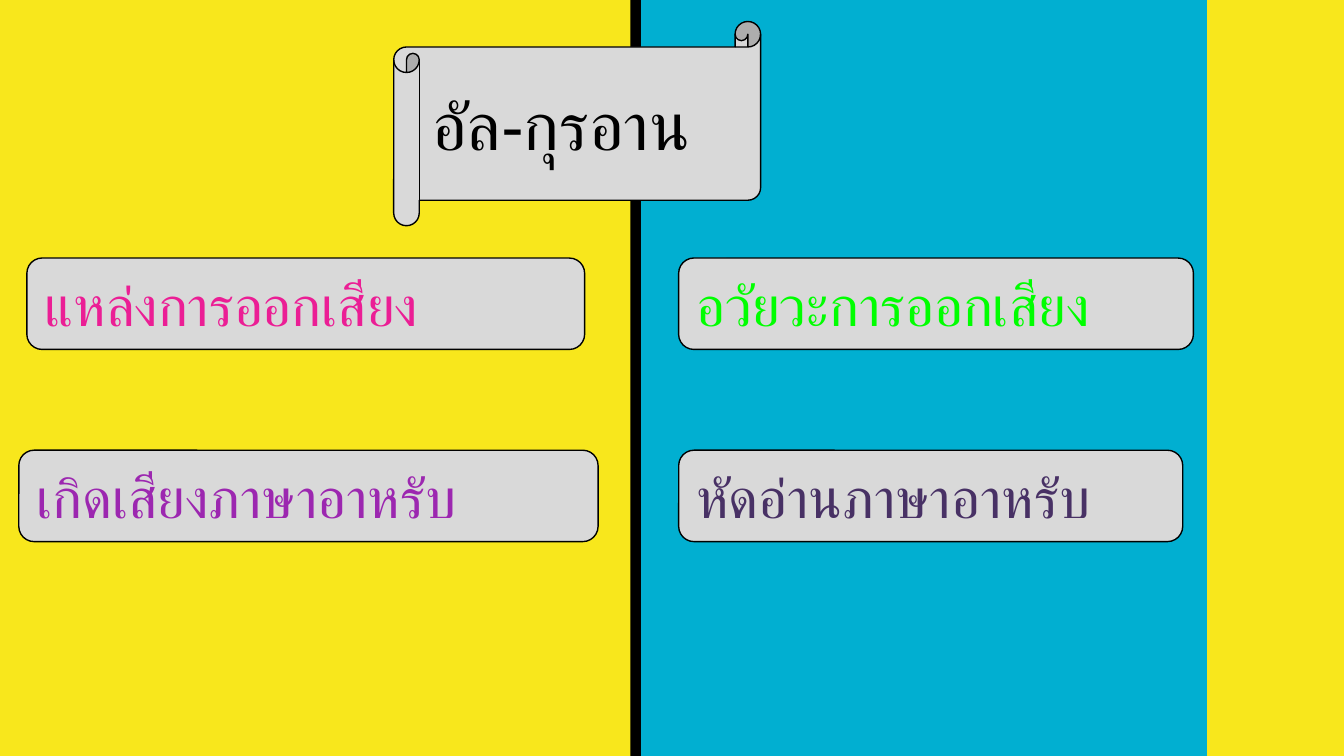
from lxml import etree
from pptx import Presentation
from pptx import util as u
from pptx.dml.color import RGBColor
from pptx.enum import shapes, text
from pptx.oxml import ns

YELLOW = RGBColor(0xF8, 0xE7, 0x1C)
BLUE = RGBColor(0x01, 0xAF, 0xD1)
BLACK = RGBColor(0x00, 0x00, 0x00)
GREY = RGBColor(0xD9, 0xD9, 0xD9)
PINK = RGBColor(0xEB, 0x1E, 0x95)
PURPLE = RGBColor(0x9C, 0x27, 0xB0)
INDIGO = RGBColor(0x48, 0x31, 0x65)
GREEN = RGBColor(0x00, 0xFF, 0x00)

WIDTH = 10
HEIGHT = WIDTH * 9 / 16
LABEL_HEIGHT = 0.68
TOP_ROW, BOTTOM_ROW = 1.92, 3.35
RIGHT_COLUMN = 5.05


class Board:
    """Draws coloured panels and captioned shapes on one slide."""

    def __init__(self, s):
        self.s = s
        s.background.fill.solid()
        s.background.fill.fore_color.rgb = YELLOW

    def shape(self, kind, box, fill):
        sp = self.s.shapes.add_shape(kind, *(u.Inches(v) for v in box))
        sp.shadow.inherit = False
        sp.fill.solid()
        sp.fill.fore_color.rgb = fill
        return sp

    def panel(self, left, width, fill):
        sp = self.shape(shapes.MSO_SHAPE.RECTANGLE, (left, 0, width, HEIGHT), fill)
        sp.line.fill.background()

    def caption(self, kind, box, words, size, font, color):
        sp = self.shape(kind, box, GREY)
        sp.line.color.rgb = BLACK
        sp.line.width = u.Pt(0.75)
        tf = sp.text_frame
        tf.word_wrap = True
        tf.vertical_anchor = text.MSO_ANCHOR.MIDDLE
        tf.margin_left = tf.margin_right = u.Inches(0.1)
        tf.margin_top = tf.margin_bottom = u.Inches(0.1)
        p = tf.paragraphs[0]
        p.alignment = text.PP_ALIGN.LEFT
        r = p.add_run()
        r.text = words
        r.font.size = u.Pt(size)
        r.font.name = font
        r.font.color.rgb = color
        for tag in ("a:ea", "a:cs"):
            etree.SubElement(r.font._element, ns.qn(tag), typeface=font)

    def scroll(self, box, words):
        self.caption(shapes.MSO_SHAPE.HORIZONTAL_SCROLL, box, words, 36, "Arial", BLACK)

    def label(self, left, top, width, words, color):
        box = (left, top, width, LABEL_HEIGHT)
        self.caption(shapes.MSO_SHAPE.ROUNDED_RECTANGLE, box, words, 30, "Arial Narrow", color)


def main():
    prs = Presentation()
    prs.slide_width, prs.slide_height = u.Inches(WIDTH), u.Inches(HEIGHT)
    board = Board(prs.slides.add_slide(prs.slide_layouts[6]))
    board.panel(4.69, 0.08, BLACK)
    board.panel(4.77, 4.21, BLUE)
    board.scroll((2.93, 0.16, 2.73, 1.52), "อัล-กุรอาน")
    board.label(0.2, TOP_ROW, 4.15, "แหล่งการออกเสียง", PINK)
    board.label(0.14, BOTTOM_ROW, 4.31, "เกิดเสียงภาษาอาหรับ", PURPLE)
    board.label(RIGHT_COLUMN, BOTTOM_ROW, 3.75, "หัดอ่านภาษาอาหรับ", INDIGO)
    board.label(RIGHT_COLUMN, TOP_ROW, 3.83, "อวัยวะการออกเสียง", GREEN)
    prs.save("out.pptx")


if __name__ == "__main__":
    main()
